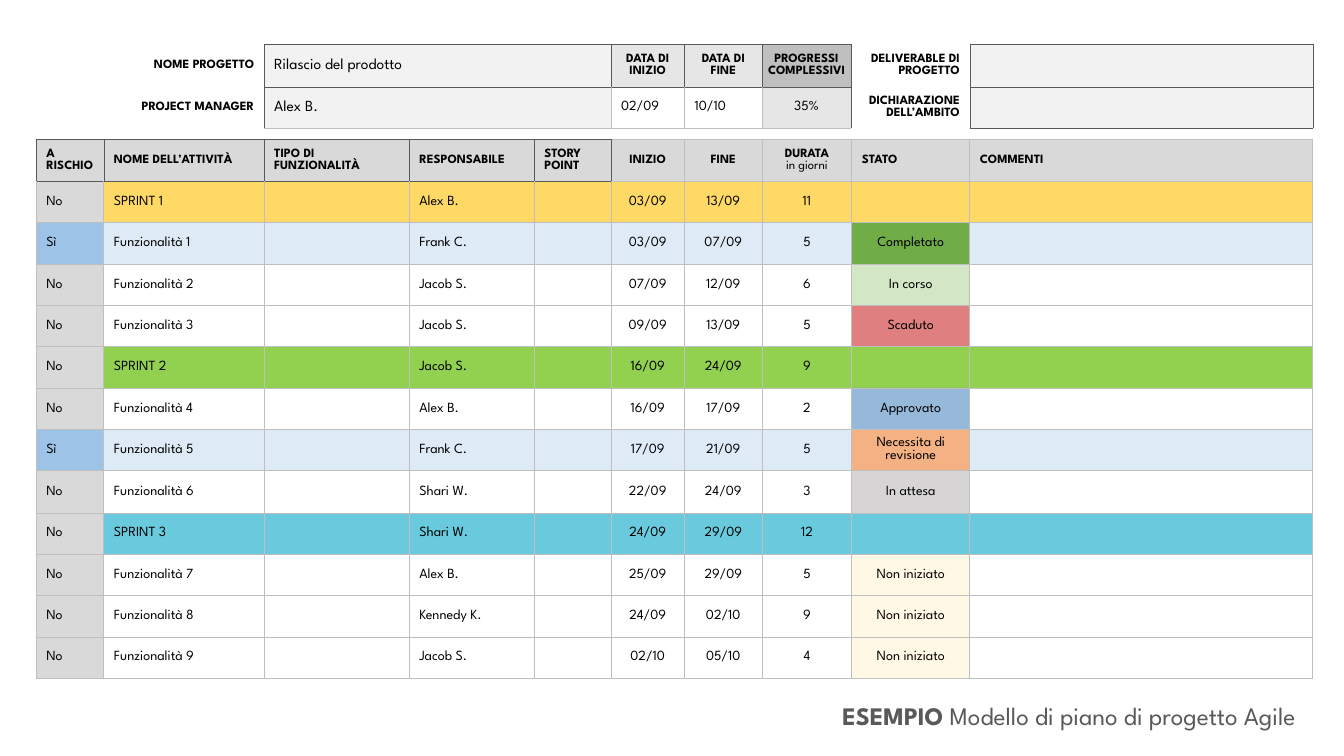
from lxml import etree
from pptx import Presentation
from pptx import util as u
from pptx.dml import color
from pptx.enum import text
from pptx.oxml import ns

SCALE = 9144  # EMU per px, 100 px to the inch
FONT = "League Spartan"
DARK, LIGHT, WHITE = "595959", "BFBFBF", "FFFFFF"
ALIGN = {"l": text.PP_ALIGN.LEFT, "c": text.PP_ALIGN.CENTER, "r": text.PP_ALIGN.RIGHT}
EDGES = {"D": (DARK, 0.25), "L": (LIGHT, 0.5)}  # any other letter: no line


def px(length):
    return u.Emu(length * SCALE)


def rgb(value):
    return color.RGBColor.from_string(value)


class Board:
    """Holds the presentation, its current slide and the text style."""

    def __init__(self, width, height):
        self.deck = Presentation()
        self.deck.slide_width, self.deck.slide_height = px(width), px(height)
        self.slide = self.deck.slides.add_slide(self.deck.slide_layouts[6])

    def add_runs(self, paragraph, runs, align, ink="000000"):
        """Each run is (wording, size, bold); a None run breaks the line."""
        paragraph.alignment = ALIGN[align]
        for part in runs:
            if part is None:
                paragraph.add_line_break()
                continue
            run = paragraph.add_run()
            run.text, run.font.size, run.font.bold = part[0], u.Pt(part[1]), part[2]
            run.font.name = FONT
            run.font.color.rgb = rgb(ink)

    def label(self, left, top, width, height, runs, align, ink):
        box = self.slide.shapes.add_textbox(*map(px, (left, top, width, height)))
        box.text_frame.word_wrap = True
        self.add_runs(box.text_frame.paragraphs[0], runs, align, ink)

    def table(self, left, top, widths, heights):
        grid = self.slide.shapes.add_table(
            len(heights), len(widths), px(left), px(top),
            px(sum(widths)), px(sum(heights))).table
        grid.first_row = grid.horz_banding = False
        for column, width in zip(grid.columns, widths):
            column.width = px(width)
        for row, height in zip(grid.rows, heights):
            row.height = px(height)
        return grid

    def cell(self, cell, runs, align="l", fill=None, alpha=None,
             edges="LLLL", margins=(10, 5, 10, 5)):
        """Edges are given as left, right, top, bottom."""
        cell.vertical_anchor = text.MSO_ANCHOR.MIDDLE
        (cell.margin_left, cell.margin_top,
         cell.margin_right, cell.margin_bottom) = map(px, margins)
        if runs:
            self.add_runs(cell.text_frame.paragraphs[0], runs, align)
        self.borders(cell, edges)
        if fill is None:
            cell.fill.background()
            return
        cell.fill.solid()
        cell.fill.fore_color.rgb = rgb(fill)
        if alpha:
            shade = cell._tc.tcPr.find(ns.qn("a:solidFill")).find(ns.qn("a:srgbClr"))
            etree.SubElement(shade, ns.qn("a:alpha")).set("val", str(alpha * 1000))

    def borders(self, cell, edges):
        properties = cell._tc.get_or_add_tcPr()
        for side, edge in zip("LRTB", edges):
            line = etree.SubElement(properties, ns.qn(f"a:ln{side}"))
            if edge not in EDGES:
                etree.SubElement(line, ns.qn("a:noFill"))
                continue
            ink, points = EDGES[edge]
            line.set("w", str(int(u.Pt(points))))
            solid = etree.SubElement(line, ns.qn("a:solidFill"))
            etree.SubElement(solid, ns.qn("a:srgbClr")).set("val", ink)


# Task plan: headings and rows
HEADINGS = ["A RISCHIO", "NOME DELL’ATTIVITÀ", "TIPO DI FUNZIONALITÀ", "RESPONSABILE",
            "STORY POINT", "INIZIO", "FINE", "DURATA", "STATO", "COMMENTI"]
TASKS = [  # at risk, task, owner, start, end, days, status
    ("No", "SPRINT 1", "Alex B.", "03/09", "13/09", "11", ""),
    ("Sì", "Funzionalità 1", "Frank C.", "03/09", "07/09", "5", "Completato"),
    ("No", "Funzionalità 2", "Jacob S.", "07/09", "12/09", "6", "In corso"),
    ("No", "Funzionalità 3", "Jacob S.", "09/09", "13/09", "5", "Scaduto"),
    ("No", "SPRINT 2", "Jacob S.", "16/09", "24/09", "9", ""),
    ("No", "Funzionalità 4", "Alex B.", "16/09", "17/09", "2", "Approvato"),
    ("Sì", "Funzionalità 5", "Frank C.", "17/09", "21/09", "5", "Necessita di revisione"),
    ("No", "Funzionalità 6", "Shari W.", "22/09", "24/09", "3", "In attesa"),
    ("No", "SPRINT 3", "Shari W.", "24/09", "29/09", "12", ""),
    ("No", "Funzionalità 7", "Alex B.", "25/09", "29/09", "5", "Non iniziato"),
    ("No", "Funzionalità 8", "Kennedy K.", "24/09", "02/10", "9", "Non iniziato"),
    ("No", "Funzionalità 9", "Jacob S.", "02/10", "05/10", "4", "Non iniziato"),
]
SPRINT_FILLS = {"SPRINT 1": "FFD966", "SPRINT 2": "92D050", "SPRINT 3": "68CADC"}
STATUS_FILLS = {"Completato": "70AD47", "In corso": "A9D18E", "Scaduto": "C00000",
                "Approvato": "2E75B6", "Necessita di revisione": "F4B183",
                "In attesa": "AFABAB", "Non iniziato": "FFF2CC"}
RISK_MARGINS = (10, 5, 0, 5)


def add_plan(board):
    plan = board.table(36, 138, [67, 159, 144, 124, 76, 73, 77, 89, 117, 340],
                       [42] + [41] * 7 + [42] + [41] * 4)
    # Heading row
    for col, heading in enumerate(HEADINGS):
        runs = [(heading, 9, True)]
        if heading == "DURATA":
            runs += [None, ("in giorni", 9, False)]
        board.cell(plan.cell(0, col), runs, "c" if 5 <= col <= 7 else "l", "D9D9D9",
                   edges="DDDD" if col < 5 else "DLLL" if col == 5 else "LLLL",
                   margins=RISK_MARGINS if col == 0 else (10, 5, 10, 5))
    # Sprints and features
    for row, (risk, task, owner, start, end, days, status) in enumerate(TASKS, 1):
        at_risk = risk == "Sì"
        base = SPRINT_FILLS.get(task, "DEEBF7" if at_risk else WHITE)
        values = [risk, task, "", owner, "", start, end, days, status, ""]
        for col, value in enumerate(values):
            fill = base
            if col == 0:
                fill = "9DC3E6" if at_risk else "D9D9D9"
            elif col == 8:
                fill = STATUS_FILLS.get(status, base)
            centred = 5 <= col <= 8
            board.cell(plan.cell(row, col), [(value, 10, False)] if value else [],
                       "c" if centred else "l", fill,
                       alpha=50 if base == WHITE and col >= 5 else None,
                       edges="LLDL" if row == 1 and col < 5 else "LLLL",
                       margins=RISK_MARGINS if col == 0 else
                       (0, 0, 0, 0) if centred else (10, 5, 10, 5))


# Project summary: wording, size, bold, alignment, fill, edges
SUMMARY = [
    [("NOME PROGETTO", 9, True, "r", None, "-D--"),
     ("Rilascio del prodotto", 11, False, "l", "F2F2F2", "DDDD"),
     ("DATA DI INIZIO", 9, True, "c", "E7E6E6", "DDDD"),
     ("DATA DI FINE", 9, True, "c", "E7E6E6", "DDDD"),
     ("PROGRESSI COMPLESSIVI", 9, True, "c", "BFBFBF", "DDDD"),
     ("DELIVERABLE DI PROGETTO", 9, True, "r", None, "DD--"),
     ("", 9, False, "l", "F2F2F2", "DDDD")],
    [("PROJECT MANAGER", 9, True, "r", None, "-D--"),
     ("Alex B.", 11, False, "l", "F2F2F2", "DLDL"),
     ("02/09", 10, False, "l", WHITE, "LLDL"),
     ("10/10", 10, False, "l", WHITE, "LLDL"),
     ("35%", 10, False, "c", "E7E6E6", "LDDL"),
     ("DICHIARAZIONE DELL’AMBITO", 9, True, "r", None, "DD--"),
     ("", 9, False, "l", "F2F2F2", "DDDD")],
]


def add_summary(board):
    summary = board.table(81, 44, [181, 344, 73, 77, 88, 118, 340], [42, 41])
    for row, entries in enumerate(SUMMARY):
        for col, (wording, size, bold, align, fill, edges) in enumerate(entries):
            narrow = wording == "PROGRESSI COMPLESSIVI"
            board.cell(summary.cell(row, col), [(wording, size, bold)] if wording else [],
                       align, fill, edges=edges,
                       margins=(4, 5, 4, 5) if narrow else (10, 5, 10, 5))


def main():
    board = Board(1333, 750)
    # Slide title at the foot
    board.label(582, 690, 719, 40, [("ESEMPIO", 18, True),
                (" Modello di piano di progetto Agile ", 18, False)], "r", DARK)
    add_plan(board)
    add_summary(board)
    board.deck.save("out.pptx")


if __name__ == "__main__":
    main()
